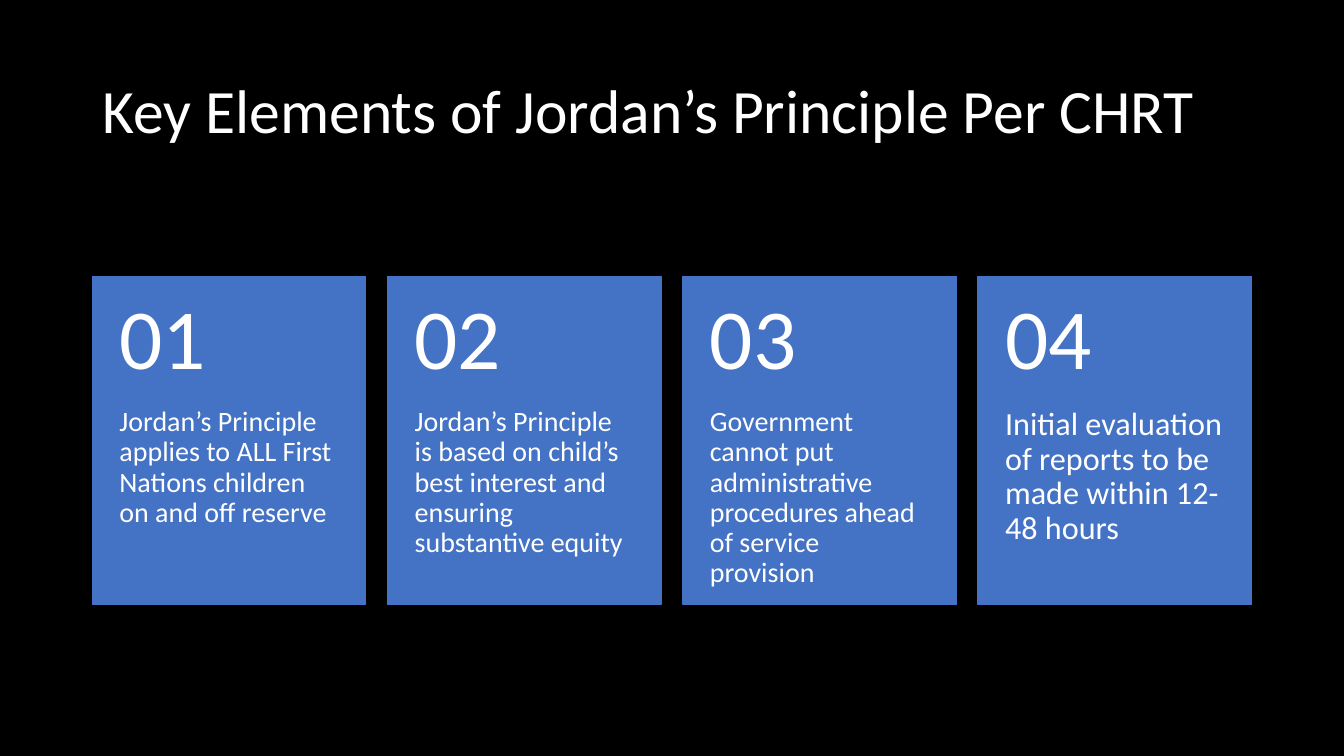
from dataclasses import dataclass

from pptx import Presentation
from pptx.dml.color import RGBColor
from pptx.enum.shapes import MSO_SHAPE as Preset
from pptx.enum.text import MSO_ANCHOR as Anchor, PP_ALIGN as Align
from pptx.slide import Slide
from pptx.text.text import TextFrame
from pptx.util import Cm, Pt

BLACK = RGBColor(0x00, 0x00, 0x00)
WHITE = RGBColor(0xFF, 0xFF, 0xFF)
BLUE = RGBColor(0x44, 0x72, 0xC4)
FONT = "Calibri"

# Card grid, in centimetres
CARD_LEFT, CARD_TOP = 2.33, 6.97
CARD_WIDTH, CARD_HEIGHT = 6.89, 8.26
CARD_PITCH = 7.44
NUMBER_HEIGHT = 3.3
SIDE_INSET = 0.68


@dataclass(frozen=True)
class Element:
    text: str
    size: float = 20


ELEMENTS = (
    Element("Jordan’s Principle applies to ALL First Nations children on and off reserve"),
    Element("Jordan’s Principle is based on child’s best interest and ensuring substantive equity"),
    Element("Government cannot put administrative procedures ahead of service provision"),
    Element("Initial evaluation of reports to be made within 12-48 hours", 23),
)


def write_text(frame: TextFrame, text: str, size: float, anchor: Anchor) -> None:
    frame.word_wrap = True
    frame.vertical_anchor = anchor
    paragraph = frame.paragraphs[0]
    paragraph.alignment = Align.LEFT
    paragraph.line_spacing = 0.9
    run = paragraph.add_run()
    run.text = text
    run.font.name = FONT
    run.font.size = Pt(size)
    run.font.color.rgb = WHITE


def add_label(slide: Slide, left: float, top: float, height: float, text: str,
              size: float, anchor: Anchor, insets: tuple[float, float]) -> None:
    box = slide.shapes.add_textbox(Cm(left), Cm(top), Cm(CARD_WIDTH), Cm(height))
    frame = box.text_frame
    frame.margin_left = frame.margin_right = Cm(SIDE_INSET)
    frame.margin_top, frame.margin_bottom = (Cm(inset) for inset in insets)
    write_text(frame, text, size, anchor)


def add_card(slide: Slide, index: int, element: Element) -> None:
    left = CARD_LEFT + index * CARD_PITCH
    card = slide.shapes.add_shape(
        Preset.RECTANGLE, Cm(left), Cm(CARD_TOP), Cm(CARD_WIDTH), Cm(CARD_HEIGHT))
    card.shadow.inherit = False
    card.fill.solid()
    card.fill.fore_color.rgb = BLUE
    card.line.color.rgb = BLUE
    card.line.width = Pt(1)

    add_label(slide, left, CARD_TOP + NUMBER_HEIGHT, CARD_HEIGHT - NUMBER_HEIGHT,
              element.text, element.size, Anchor.TOP, (0, 0.92))
    add_label(slide, left, CARD_TOP, NUMBER_HEIGHT,
              f"{index + 1:02d}", 61, Anchor.MIDDLE, (0.46, 0.46))


def main() -> None:
    presentation = Presentation()
    presentation.slide_width = Cm(33.87)
    presentation.slide_height = Cm(19.05)
    slide = presentation.slides.add_slide(presentation.slide_layouts[5])

    # Background
    slide.background.fill.solid()
    slide.background.fill.fore_color.rgb = BLACK

    # Title
    title = slide.shapes.title
    title.left, title.top, title.width, title.height = Cm(2.33), Cm(1.01), Cm(29.21), Cm(3.68)
    write_text(title.text_frame, "Key Elements of Jordan’s Principle Per CHRT", 44, Anchor.MIDDLE)

    # Numbered cards
    for index, element in enumerate(ELEMENTS):
        add_card(slide, index, element)

    presentation.save("out.pptx")


if __name__ == "__main__":
    main()
